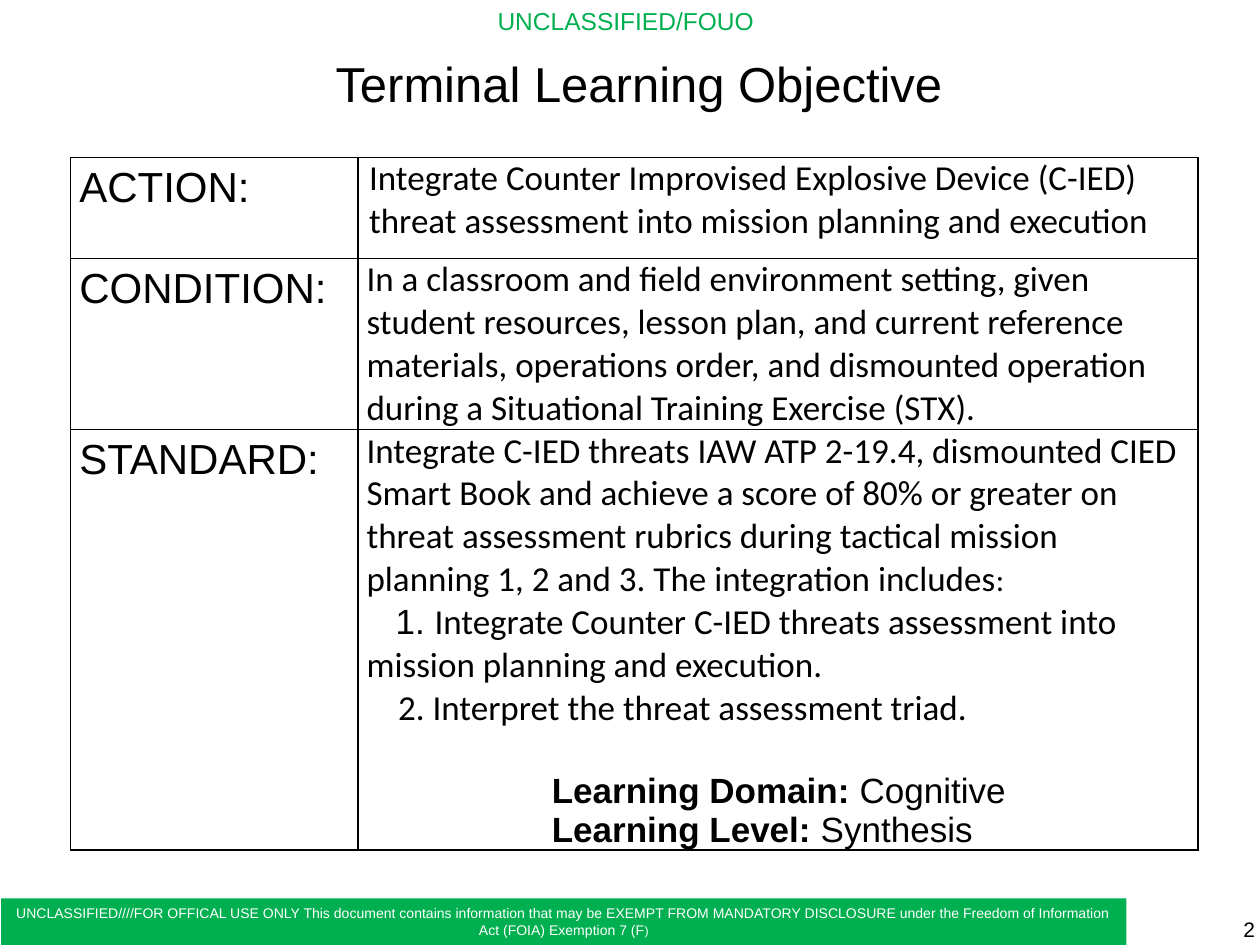
from lxml.etree import SubElement
from pptx import Presentation
from pptx.dml.color import RGBColor
from pptx.enum.shapes import MSO_SHAPE
from pptx.enum.text import MSO_ANCHOR as Anchor, MSO_AUTO_SIZE as AutoSize, PP_ALIGN as Align
from pptx.oxml.ns import qn
from pptx.util import Inches, Pt

BLACK = RGBColor(0x00, 0x00, 0x00)
WHITE = RGBColor(0xFF, 0xFF, 0xFF)
GREEN = RGBColor(0x00, 0xB0, 0x50)

ACTION = "Integrate Counter Improvised Explosive Device (C-IED) threat assessment into mission planning and execution"
CONDITION = (
    "In a classroom and field environment setting, given student resources, lesson plan, "
    "and current reference materials, operations order, and dismounted operation during a "
    "Situational Training Exercise (STX)."
)
STANDARD = (
    "Integrate C-IED threats IAW ATP 2-19.4, dismounted CIED Smart Book and achieve a score of 80% "
    "or greater on threat assessment rubrics during tactical mission planning 1, 2 and 3. "
    "The integration includes"
)
FOOTER = (
    "UNCLASSIFIED////FOR OFFICAL USE ONLY This document contains information that may be "
    "EXEMPT FROM MANDATORY DISCLOSURE under the Freedom of Information Act (FOIA) Exemption 7 (F"
)


def add_run(paragraph, text, size=20, font="Arial", color=BLACK, bold=False):
    """Append a formatted run to a paragraph."""
    run = paragraph.add_run()
    run.text = text
    run.font.size = Pt(size)
    run.font.name = font
    run.font.bold = bold
    run.font.color.rgb = color


def indent(paragraph, left=0, first=0):
    """Set the left and first-line indents of a paragraph."""
    properties = paragraph._p.get_or_add_pPr()
    properties.set("marL", str(Inches(left)))
    properties.set("indent", str(Inches(first)))


def add_label(slide, box, text, align, anchor=Anchor.TOP, wrap=True, **style):
    """Place a single-paragraph text box."""
    frame = slide.shapes.add_textbox(*map(Inches, box)).text_frame
    frame.word_wrap = wrap
    frame.vertical_anchor = anchor
    paragraph = frame.paragraphs[0]
    paragraph.alignment = align
    add_run(paragraph, text, **style)
    return frame


def add_footer(slide, box):
    """Draw the green disclosure banner."""
    banner = slide.shapes.add_shape(MSO_SHAPE.RECTANGLE, *map(Inches, box))
    banner.shadow.inherit = False
    banner.fill.solid()
    banner.fill.fore_color.rgb = GREEN
    banner.line.fill.background()
    frame = banner.text_frame
    frame.word_wrap = True
    frame.auto_size = AutoSize.SHAPE_TO_FIT_TEXT
    paragraph = frame.paragraphs[0]
    paragraph.alignment = Align.CENTER
    add_run(paragraph, FOOTER, size=8, color=WHITE)
    add_run(paragraph, ")", size=7, color=WHITE)


def format_cell(cell):
    """Give a cell its margins, empty fill and thin black borders."""
    cell.margin_left = cell.margin_right = Inches(0.07)
    cell.margin_top = cell.margin_bottom = 0
    cell.fill.background()
    properties = cell._tc.get_or_add_tcPr()
    for position, side in enumerate(("lnL", "lnR", "lnT", "lnB")):
        border = SubElement(properties, qn(f"a:{side}"), w=str(Pt(1)))
        fill = SubElement(border, qn("a:solidFill"))
        SubElement(fill, qn("a:srgbClr"), val=str(BLACK))
        properties.insert(position, border)


def fill_standard(frame):
    """Write the standard, its numbered parts and the learning lines."""
    paragraph = frame.paragraphs[0]
    add_run(paragraph, STANDARD, font="Calibri")
    add_run(paragraph, ":", size=18, font="Calibri")

    paragraph = frame.add_paragraph()
    indent(paragraph, first=0.23)
    add_run(paragraph, "1. ")
    add_run(paragraph, "Integrate Counter C-IED threats assessment into mission planning and execution.", font="Calibri")

    paragraph = frame.add_paragraph()
    indent(paragraph, first=0.25)
    add_run(paragraph, "2. Interpret the threat assessment triad.", font="Calibri")

    for name, value, gap in (("Domain", "Cognitive", 24), ("Level", "Synthesis", 0)):
        paragraph = frame.add_paragraph()
        indent(paragraph, left=1.47)
        paragraph.space_before = Pt(gap)
        add_run(paragraph, f"Learning {name}: ", bold=True)
        add_run(paragraph, value)


def add_objective_table(slide, box):
    """Build the action, condition and standard table."""
    table = slide.shapes.add_table(3, 2, *map(Inches, box)).table
    table.first_row = table.horz_banding = False
    for column, width in zip(table.columns, (2.28, 6.67)):
        column.width = Inches(width)
    for row, height in zip(table.rows, (0.8, 1.36, 3.31)):
        row.height = Inches(height)
    for cell in table.iter_cells():
        format_cell(cell)
    for row, heading in enumerate(("ACTION:", "CONDITION:", "STANDARD:")):
        paragraph = table.cell(row, 0).text_frame.paragraphs[0]
        paragraph.line_spacing = 1.15
        add_run(paragraph, heading, size=24)
    for row, (text, left) in enumerate(((ACTION, 0.02), (CONDITION, 0))):
        paragraph = table.cell(row, 1).text_frame.paragraphs[0]
        indent(paragraph, left=left)
        add_run(paragraph, text, font="Calibri")
    fill_standard(table.cell(2, 1).text_frame)


def main():
    """Build and save the slide."""
    presentation = Presentation()
    presentation.slide_width = Inches(10)
    presentation.slide_height = Inches(7.5)
    slide = presentation.slides.add_slide(presentation.slide_layouts[6])
    marking = add_label(slide, (3.85, 0, 2.29, 0.34), "UNCLASSIFIED/FOUO", Align.LEFT, wrap=False, size=14, color=GREEN)
    marking.auto_size = AutoSize.SHAPE_TO_FIT_TEXT
    add_footer(slide, (0.01, 7.13, 8.93, 0.37))
    add_label(slide, (0.57, 0.3, 9, 0.72), "Terminal Learning Objective", Align.CENTER, Anchor.MIDDLE, size=28)
    add_label(slide, (7.73, 7.25, 2.33, 0.25), "2", Align.RIGHT, Anchor.MIDDLE, size=12)
    add_objective_table(slide, (0.56, 1.25, 8.95, 5.47))
    presentation.save("out.pptx")


if __name__ == "__main__":
    main()
